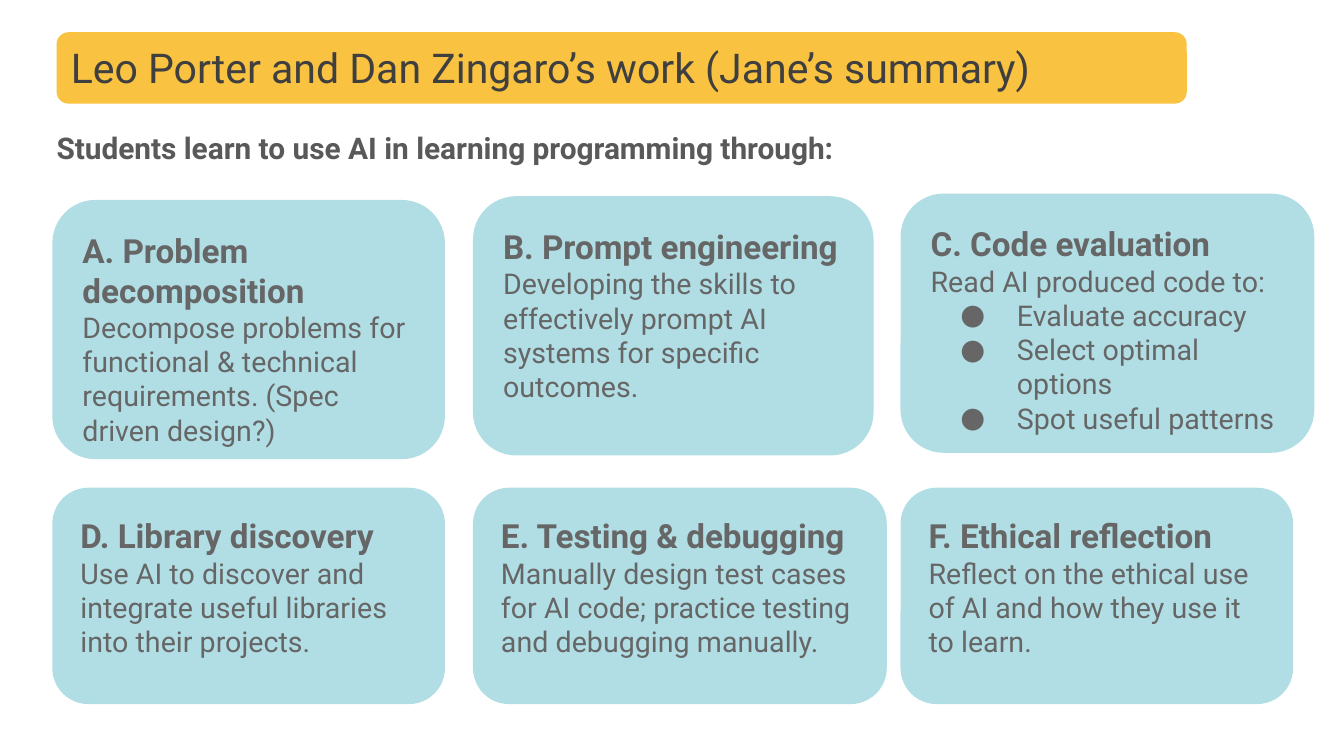
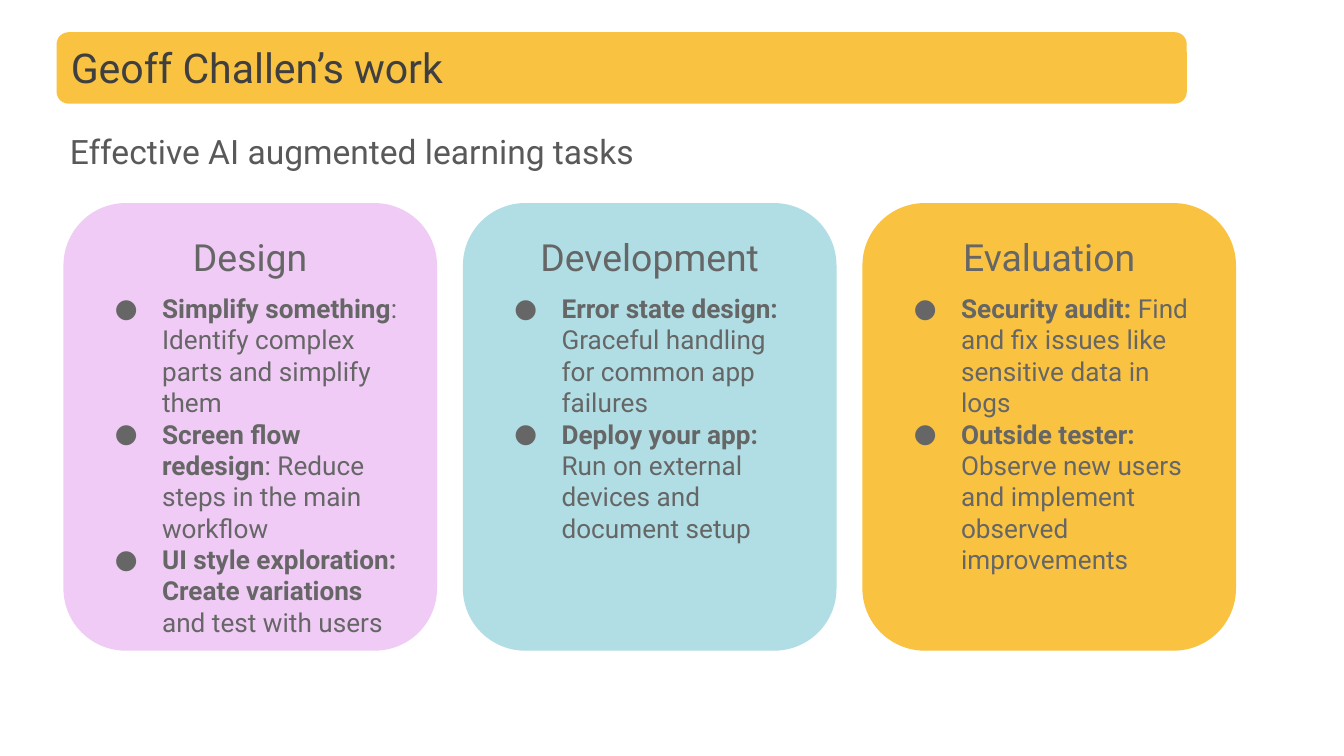
import pptx
import pptx.util
import pptx.dml.color
import pptx.enum.shapes
import pptx.enum.text
import pptx.oxml.ns
import lxml.etree

Cm = pptx.util.Cm
Pt = pptx.util.Pt
FONT = "Roboto"
COLORS = {
    "gold": "F9C341",
    "aqua": "B0DEE4",
    "lilac": "EFCBF5",
    "title": "3F3F3F",
    "lead": "595959",
    "body": "666666",
}
HEAD_SIZE, BODY_SIZE = 17.8, 15.3

SKILLS = [
    [
        (3.78, 7.42, "A. Problem decomposition",
         ["Decompose problems for",
          "functional & technical requirements. (Spec driven design?)"], []),
        (3.71, 7.57, "B. Prompt engineering",
         ["Developing the skills to effectively prompt AI systems for specific outcomes."], []),
        (3.66, 7.82, "C. Code evaluation", ["Read AI produced code to:"],
         ["Evaluate accuracy", "Select optimal options", "Spot useful patterns"]),
    ],
    [
        (9.22, 7.42, "D. Library discovery",
         ["Use AI to discover and integrate useful libraries into their projects."], []),
        (9.22, 7.82, "E. Testing & debugging",
         ["Manually design test cases for AI code; practice testing and debugging manually."], []),
        (9.22, 7.42, "F. Ethical reflection",
         ["Reflect on the ethical use of AI and how they use it to learn."], []),
    ],
]
SKILL_LEFTS = [0.99, 8.94, 17.02]
SKILL_HEIGHTS = [4.9, 4.09]

TASKS = [
    ("Design", "lilac", [
        ("Simplify something", ": Identify complex parts and simplify them"),
        ("Screen flow redesign", ": Reduce steps in the main workflow"),
        ("UI style exploration: Create variations ", "and test with users"),
    ]),
    ("Development", "aqua", [
        ("Error state design:", " Graceful handling for common app failures"),
        ("Deploy your app: ", "Run on external devices and document setup"),
    ]),
    ("Evaluation", "gold", [
        ("Security audit:", " Find and fix issues like sensitive data in logs"),
        ("Outside tester:", " Observe new users and implement observed improvements"),
    ]),
]


def rgb(name):
    return pptx.dml.color.RGBColor.from_string(COLORS[name])


def set_frame(tf, inset_x, inset_y, anchor):
    tf.word_wrap = True
    tf.margin_left = tf.margin_right = Cm(inset_x)
    tf.margin_top = tf.margin_bottom = Cm(inset_y)
    tf.vertical_anchor = anchor


def add_paragraph(tf, align=pptx.enum.text.PP_ALIGN.LEFT):
    first = tf.paragraphs[0]
    p = tf.add_paragraph() if first.runs else first
    p.alignment = align
    return p


def add_run(p, text, size, color="body", bold=False):
    r = p.add_run()
    r.text = text
    r.font.name = FONT
    r.font.size = Pt(size)
    r.font.bold = bold
    r.font.color.rgb = rgb(color)


def add_bullet(p, left, hanging):
    qn = pptx.oxml.ns.qn
    pPr = p._p.get_or_add_pPr()
    pPr.set("marL", str(Cm(left)))
    pPr.set("indent", str(-Cm(hanging)))
    color = lxml.etree.SubElement(pPr, qn("a:buClr"))
    lxml.etree.SubElement(color, qn("a:srgbClr"), val=COLORS["body"])
    lxml.etree.SubElement(pPr, qn("a:buFont"), typeface=FONT)
    lxml.etree.SubElement(pPr, qn("a:buChar"), char="●")


def add_card(s, left, top, width, height, fill, inset=0.25):
    sp = s.shapes.add_shape(pptx.enum.shapes.MSO_SHAPE.ROUNDED_RECTANGLE,
                            Cm(left), Cm(top), Cm(width), Cm(height))
    sp.shadow.inherit = False
    sp.fill.solid()
    sp.fill.fore_color.rgb = rgb(fill)
    sp.line.fill.background()
    set_frame(sp.text_frame, inset, inset, pptx.enum.text.MSO_ANCHOR.TOP)
    return sp.text_frame


def add_text(s, left, top, width, height, text, size, color, bold=False,
             insets=(0.25, 0.13), anchor=pptx.enum.text.MSO_ANCHOR.MIDDLE):
    tf = s.shapes.add_textbox(Cm(left), Cm(top), Cm(width), Cm(height)).text_frame
    set_frame(tf, *insets, anchor)
    add_run(add_paragraph(tf), text, size, color, bold)


def add_titled_slide(prs, title):
    s = prs.slides.add_slide(prs.slide_layouts[6])
    add_card(s, 1.07, 0.61, 21.36, 1.35, "gold")
    add_text(s, 1.09, 0.64, 21.36, 1.27, title, 22, "title")
    return s


def add_skill_card(s, left, height, skill):
    top, width, heading, lines, points = skill
    tf = add_card(s, left, top, width, height, "aqua", 0.33)
    add_run(add_paragraph(tf), heading, HEAD_SIZE, bold=True)
    for line in lines:
        add_run(add_paragraph(tf), line, BODY_SIZE)
    for point in points:
        p = add_paragraph(tf)
        add_bullet(p, 1.63, 1.07)
        add_run(p, point, BODY_SIZE)


def add_task_card(s, left, heading, fill, tasks):
    tf = add_card(s, left, 3.84, 7.06, 8.46, fill)
    p = add_paragraph(tf, pptx.enum.text.PP_ALIGN.CENTER)
    p.space_after = Pt(7)
    add_run(p, heading, 20)
    for name, detail in tasks:
        p = add_paragraph(tf)
        add_bullet(p, 1.27, 0.89)
        add_run(p, name, 14, bold=True)
        add_run(p, detail, 14)


def add_skills_slide(prs):
    s = add_titled_slide(prs, "Leo Porter and Dan Zingaro’s work (Jane’s summary)")
    add_text(s, 1.07, 2.39, 23.29, 0.79,
             "Students learn to use AI in learning programming through:",
             16, "lead", bold=True, insets=(0, 0))
    for height, row in zip(SKILL_HEIGHTS, SKILLS):
        for left, skill in zip(SKILL_LEFTS, row):
            add_skill_card(s, left, height, skill)


def add_tasks_slide(prs):
    s = add_titled_slide(prs, "Geoff Challen’s work")
    add_text(s, 1.07, 2.34, 23.29, 11.07, "Effective AI augmented learning tasks",
             18, "lead", anchor=pptx.enum.text.MSO_ANCHOR.TOP)
    for i, (heading, fill, tasks) in enumerate(TASKS):
        add_task_card(s, 1.2 + 7.55 * i, heading, fill, tasks)


def main():
    prs = pptx.Presentation()
    prs.slide_width, prs.slide_height = Cm(25.4), Cm(14.29)
    add_skills_slide(prs)
    add_tasks_slide(prs)
    prs.save("out.pptx")


if __name__ == "__main__":
    main()
